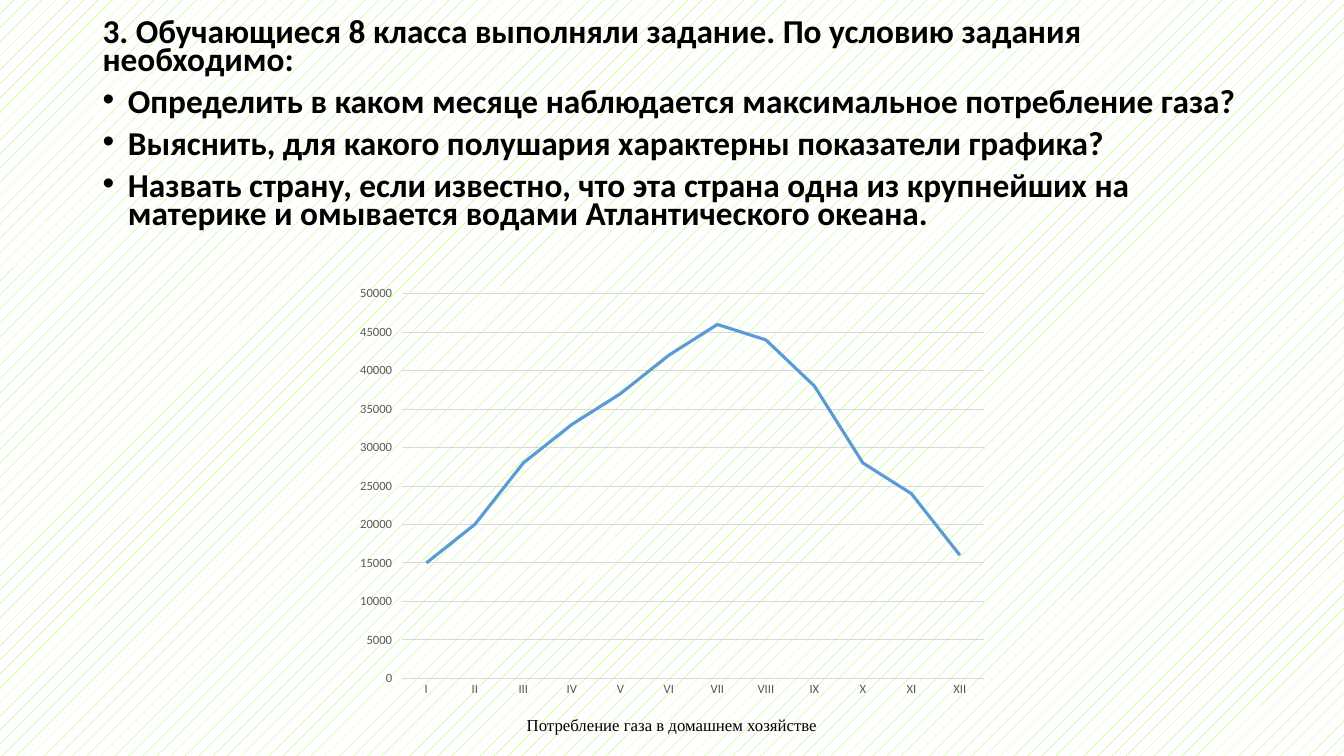
from pptx import Presentation
from pptx.chart.data import CategoryChartData
from pptx.dml.color import RGBColor
from pptx.enum.chart import XL_CHART_TYPE, XL_TICK_MARK
from pptx.enum.dml import MSO_PATTERN
from pptx.enum.text import MSO_ANCHOR, MSO_AUTO_SIZE, PP_ALIGN
from pptx.oxml.ns import qn
from pptx.util import Cm, Pt
from lxml import etree

LINE = XL_CHART_TYPE.LINE
TICK_NONE, TICK_OUT = XL_TICK_MARK.NONE, XL_TICK_MARK.OUTSIDE
DOTS = MSO_PATTERN.PERCENT_5
TOP, MIDDLE = MSO_ANCHOR.TOP, MSO_ANCHOR.MIDDLE
NO_FIT = MSO_AUTO_SIZE.NONE
CENTER = PP_ALIGN.CENTER

BLACK = RGBColor(0x00, 0x00, 0x00)
WHITE = RGBColor(0xFF, 0xFF, 0xFF)
LIME = RGBColor(0x9A, 0xF9, 0x27)
GRAY = RGBColor(0x59, 0x59, 0x59)
LIGHT_GRAY = RGBColor(0xD9, 0xD9, 0xD9)
BLUE = RGBColor(0x5B, 0x9B, 0xD5)

INTRO = "3. Обучающиеся 8 класса выполняли задание. По условию задания необходимо:"
TASKS = [
    "Определить в каком месяце наблюдается максимальное потребление газа?",
    "Выяснить, для какого полушария характерны показатели графика?",
    "Назвать страну, если известно, что эта страна одна из крупнейших на "
    "материке и омывается водами Атлантического океана.",
]
MONTHS = ["I", "II", "III", "IV", "V", "VI", "VII", "VIII", "IX", "X", "XI", "XII"]
GAS = [15000, 20000, 28000, 33000, 37000, 42000,
       46000, 44000, 38000, 28000, 24000, 16000]
CAPTION = "Потребление газа в домашнем хозяйстве"


def set_font(font, size, color=BLACK, name="Calibri", bold=False):
    font.name, font.size, font.bold = name, Pt(size), bold
    font.color.rgb = color


def write(p, text, size, align=None, spacing=None, before=0, bullet=None,
          indent=0, **font):
    pPr = p._p.get_or_add_pPr()
    pPr.set("marL", str(Cm(indent)))
    pPr.set("indent", str(-Cm(indent)))
    p.alignment = align
    p.line_spacing = spacing
    p.space_before = Pt(before)
    if bullet:
        etree.SubElement(pPr, qn("a:buFont")).set("typeface", "Arial")
        etree.SubElement(pPr, qn("a:buChar")).set("char", bullet)
    else:
        etree.SubElement(pPr, qn("a:buNone"))
    r = p.add_run()
    r.text = text
    set_font(r.font, size, **font)


class Deck:
    def __init__(self):
        self.prs = Presentation()
        self.prs.slide_width, self.prs.slide_height = Cm(33.87), Cm(19.05)

    def add_slide(self):
        self.s = self.prs.slides.add_slide(self.prs.slide_layouts[1])
        title = self.s.shapes.title._element
        title.getparent().remove(title)
        fill = self.s.background.fill
        fill.patterned()
        fill.pattern = DOTS
        fill.fore_color.rgb, fill.back_color.rgb = LIME, WHITE

    def body(self, intro, tasks, left, top, width, height):
        sp = self.s.placeholders[1]
        sp.left, sp.top, sp.width, sp.height = map(Cm, (left, top, width, height))
        tf = sp.text_frame
        tf.auto_size, tf.vertical_anchor, tf.word_wrap = NO_FIT, TOP, True
        style = dict(size=23.8, spacing=0.7, bold=True)
        write(tf.paragraphs[0], intro, **style)
        for task in tasks:
            write(tf.add_paragraph(), task, before=10, bullet="•",
                  indent=0.64, **style)

    def line_chart(self, cats, vals, left, top, width, height):
        data = CategoryChartData()
        data.categories = cats
        data.add_series("Series 1", vals)
        chart = self.s.shapes.add_chart(
            LINE, Cm(left), Cm(top), Cm(width), Cm(height), data).chart
        chart.has_legend = chart.has_title = False
        set_font(chart.font, 10)
        plot = chart.plots[0]
        plot.vary_by_categories = False
        series = plot.series[0]
        series.smooth = False
        series.format.line.color.rgb = BLUE
        series.format.line.width = Pt(2.25)

        cat, val = chart.category_axis, chart.value_axis
        val.minimum_scale, val.maximum_scale, val.major_unit = 0, 50000, 5000
        cat.major_tick_mark, val.major_tick_mark = TICK_NONE, TICK_OUT
        for axis in (cat, val):
            set_font(axis.tick_labels.font, 9, GRAY)
        val.has_major_gridlines = True
        val.format.line.fill.background()
        for line in (cat.format.line, val.major_gridlines.format.line):
            line.color.rgb = LIGHT_GRAY
            line.width = Pt(0.75)

    def caption(self, text, left, top, width, height):
        sp = self.s.shapes.add_textbox(Cm(left), Cm(top), Cm(width), Cm(height))
        tf = sp.text_frame
        tf.word_wrap, tf.vertical_anchor = True, MIDDLE
        write(tf.paragraphs[0], text, 12, align=CENTER, name="Times New Roman")


def main():
    deck = Deck()
    deck.add_slide()
    deck.body(INTRO, TASKS, 2.33, 0.4, 29.21, 6.6)
    deck.line_chart(MONTHS, GAS, 8.75, 7, 16.38, 10.78)
    deck.caption(CAPTION, 0, 17.86, 33.87, 0.8)
    deck.prs.save("out.pptx")


if __name__ == "__main__":
    main()
